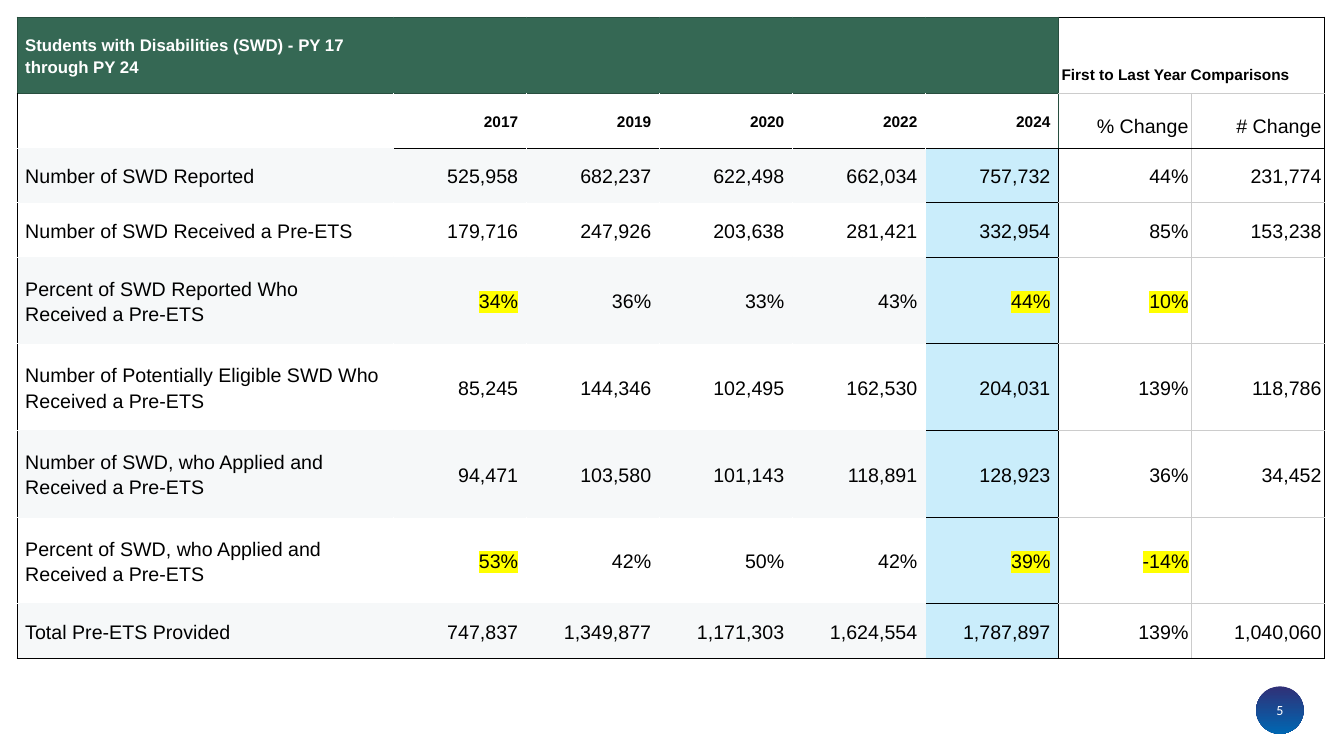
"""Build a slide with a table of students with disabilities by program year."""
from lxml.etree import SubElement
from pptx import Presentation
from pptx.dml.color import RGBColor
from pptx.enum.shapes import MSO_SHAPE
from pptx.enum.text import MSO_ANCHOR, PP_ALIGN
from pptx.oxml.ns import qn
from pptx.util import Inches, Pt

ROWS = [
    ["Students with Disabilities (SWD) - PY 17 through PY 24", "", "", "", "", "",
     "First to Last Year Comparisons", ""],
    ["", "2017", "2019", "2020", "2022", "2024", "% Change", "# Change"],
    ["Number of SWD Reported",
     "525,958", "682,237", "622,498", "662,034", "757,732", "44%", "231,774"],
    ["Number of SWD Received a Pre-ETS",
     "179,716", "247,926", "203,638", "281,421", "332,954", "85%", "153,238"],
    ["Percent of SWD Reported Who Received a Pre-ETS",
     "34%", "36%", "33%", "43%", "44%", "10%", ""],
    ["Number of Potentially Eligible SWD Who Received a Pre-ETS",
     "85,245", "144,346", "102,495", "162,530", "204,031", "139%", "118,786"],
    ["Number of SWD, who Applied and Received a Pre-ETS",
     "94,471", "103,580", "101,143", "118,891", "128,923", "36%", "34,452"],
    ["Percent of SWD, who Applied and Received a Pre-ETS",
     "53%", "42%", "50%", "42%", "39%", "-14%", ""],
    ["Total Pre-ETS Provided",
     "747,837", "1,349,877", "1,171,303", "1,624,554", "1,787,897", "139%", "1,040,060"],
]
PAGE_NUMBER = "5"
COLUMN_WIDTHS = [3.73] + [1.32] * 7
ROW_HEIGHTS = [0.76] + [0.54] * 3 + [0.86] * 4 + [0.54]
PERCENT_ROWS = (4, 7)
HIGHLIGHTED_COLUMNS = (1, 5, 6)
LAST_YEAR, CHANGE = 5, 6
BLACK, WHITE, YELLOW = "000000", "FFFFFF", "FFFF00"
GREEN, DARK_GREEN = "356854", "284E3F"
BAND, LIGHT_BLUE, GRAY = "F6F8F9", "CAEDFB", "CCCCCC"


def rgb(color):
    return RGBColor.from_string(color)


def row_color(row):
    if row == 0:
        return GREEN
    return WHITE if row % 2 else BAND


def horizontal_edge(edge, column):
    if column >= CHANGE:
        return BLACK if edge in (0, 2, len(ROWS)) else GRAY
    if edge < 2:
        return DARK_GREEN
    if edge == len(ROWS) or column == LAST_YEAR or (edge == 2 and column > 0):
        return BLACK
    return BAND


def vertical_edge(row, edge):
    if edge == len(COLUMN_WIDTHS) or (row == 0 and edge > CHANGE):
        return BLACK
    if edge > CHANGE:
        return GRAY
    if edge == CHANGE:
        return DARK_GREEN if row < 2 else BLACK
    if edge == 0:
        return BLACK if row else DARK_GREEN
    return row_color(row)


def draw_borders(cell, row, column):
    properties = cell._tc.get_or_add_tcPr()
    edges = {"a:lnL": vertical_edge(row, column),
             "a:lnR": vertical_edge(row, column + 1),
             "a:lnT": horizontal_edge(row, column),
             "a:lnB": horizontal_edge(row + 1, column)}
    for tag, color in edges.items():
        line = SubElement(properties, qn(tag), w=str(Pt(0.75)))
        SubElement(SubElement(line, qn("a:solidFill")), qn("a:srgbClr"), val=color)


def fill_cell(cell, row, column):
    if column >= CHANGE:
        cell.fill.background()
        return
    cell.fill.solid()
    is_last_year = column == LAST_YEAR and row >= 2
    cell.fill.fore_color.rgb = rgb(LIGHT_BLUE if is_last_year else row_color(row))


def write_cell(cell, row, column):
    cell.margin_left = cell.margin_right = Inches(0.03 if column >= CHANGE else 0.08)
    cell.margin_top = cell.margin_bottom = Inches(0.1)
    at_bottom = column >= CHANGE and row < 2
    cell.vertical_anchor = MSO_ANCHOR.BOTTOM if at_bottom else MSO_ANCHOR.MIDDLE
    paragraph = cell.text_frame.paragraphs[0]
    paragraph.alignment = PP_ALIGN.RIGHT if row and column else PP_ALIGN.LEFT
    paragraph.line_spacing = 1.15
    is_heading = row == 0 or (row == 1 and column < CHANGE)
    is_title = row == 0 and column == 0
    size = 12 if is_title else 11 if is_heading else 14
    style_text(paragraph, "Arial", size, WHITE if is_title else BLACK, is_heading)
    if ROWS[row][column]:
        run = paragraph.add_run()
        run.text = ROWS[row][column]
        if row in PERCENT_ROWS and column in HIGHLIGHTED_COLUMNS:
            highlight = SubElement(run._r.get_or_add_rPr(), qn("a:highlight"))
            SubElement(highlight, qn("a:srgbClr"), val=YELLOW)


def style_text(paragraph, name, size, color, bold=False):
    font = paragraph.font
    font.name, font.size, font.bold = name, Pt(size), bold
    font.color.rgb = rgb(color)


def add_students_table(slide):
    table = slide.shapes.add_table(
        len(ROWS), len(COLUMN_WIDTHS), Inches(0.17), Inches(0.17),
        Inches(sum(COLUMN_WIDTHS)), Inches(sum(ROW_HEIGHTS))).table
    table.first_row = table.horz_banding = False
    for column, width in zip(table.columns, COLUMN_WIDTHS):
        column.width = Inches(width)
    for row, height in zip(table.rows, ROW_HEIGHTS):
        row.height = Inches(height)
    for row in range(len(ROWS)):
        for column in range(len(COLUMN_WIDTHS)):
            cell = table.cell(row, column)
            draw_borders(cell, row, column)
            fill_cell(cell, row, column)
            write_cell(cell, row, column)
    table.cell(0, CHANGE).merge(table.cell(0, CHANGE + 1))


def add_page_badge(slide):
    badge = slide.shapes.add_shape(
        MSO_SHAPE.OVAL, Inches(12.46), Inches(6.81), Inches(0.47), Inches(0.47))
    badge.shadow.inherit = False
    badge.line.fill.background()
    badge.fill.gradient()
    badge.fill.gradient_angle = 270
    for stop, color in zip(badge.fill.gradient_stops, ("303077", "0067B2")):
        stop.color.rgb = rgb(color)
    frame = badge.text_frame
    frame.margin_left = frame.margin_right = frame.margin_top = frame.margin_bottom = 0
    frame.vertical_anchor = MSO_ANCHOR.MIDDLE
    frame.text = PAGE_NUMBER
    paragraph = frame.paragraphs[0]
    paragraph.alignment = PP_ALIGN.CENTER
    style_text(paragraph, "Calibri", 10, WHITE)


def main():
    presentation = Presentation()
    presentation.slide_width = Inches(13.33)
    presentation.slide_height = Inches(7.5)
    slide = presentation.slides.add_slide(presentation.slide_layouts[6])
    add_page_badge(slide)
    add_students_table(slide)
    presentation.save("out.pptx")


if __name__ == "__main__":
    main()
